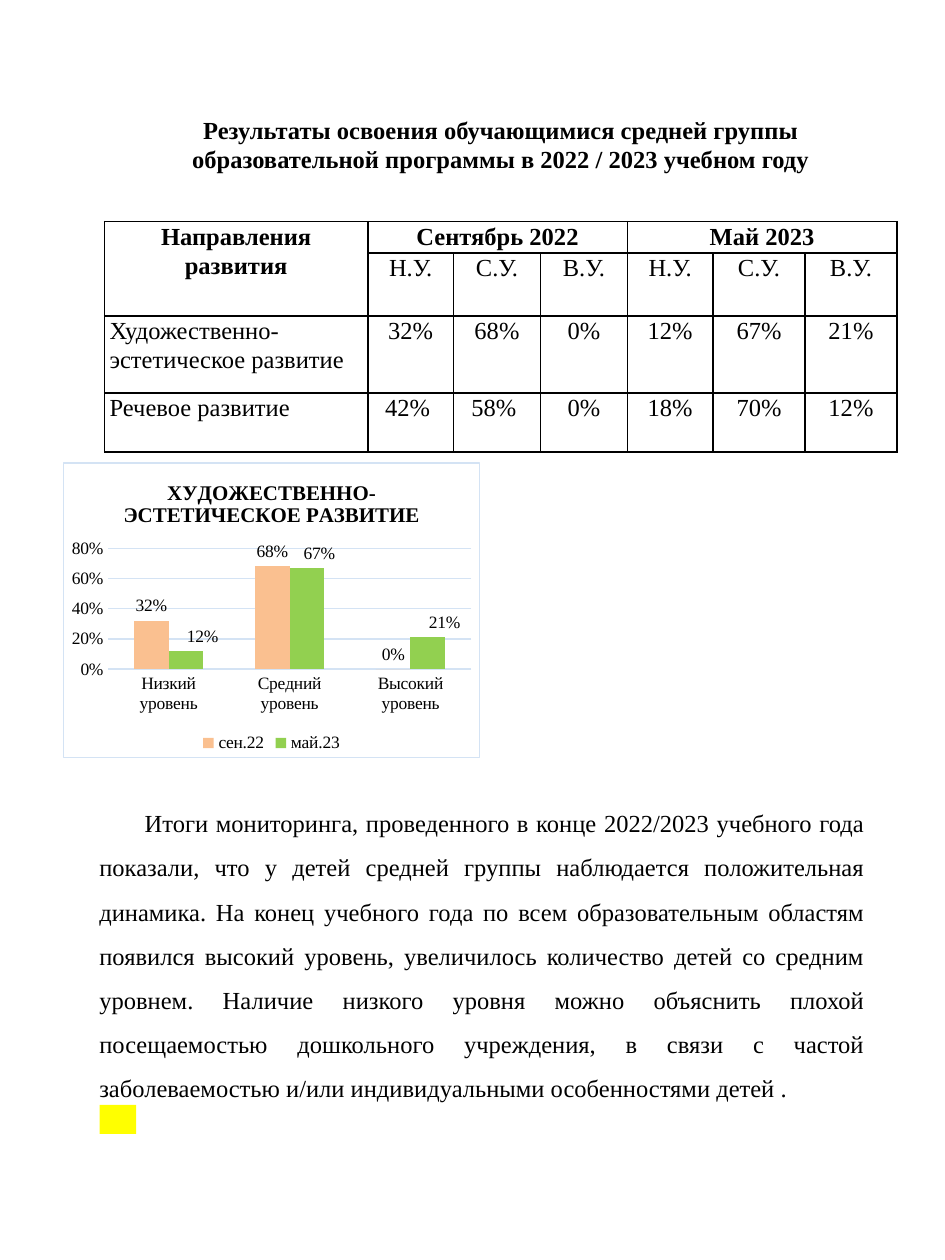
from lxml.etree import SubElement, fromstring
from pptx import Presentation
from pptx.chart.data import CategoryChartData
from pptx.dml.color import RGBColor as RGB
from pptx.enum.chart import (XL_CHART_TYPE as CT, XL_LABEL_POSITION as LP,
                             XL_LEGEND_POSITION as LEG, XL_TICK_MARK as TM)
from pptx.enum.shapes import MSO_SHAPE as SHAPE
from pptx.enum.text import MSO_ANCHOR as ANCHOR, MSO_AUTO_SIZE as FIT, PP_ALIGN as AL
from pptx.oxml import parse_xml
from pptx.oxml.ns import nsdecls, qn
from pptx.util import Inches, Pt

THEME = {
    "font": "Times New Roman", "ink": "000000", "paper": "FFFFFF", "grid": "D4E3F4",
    "mark": "FFFF00", "series": ["FAC090", "92D050"],
    "body": 14, "chart": 10, "chart_title": 12,
}

TITLE = ("Результаты освоения обучающимися средней группы "
         "образовательной программы в 2022 / 2023 учебном году")
PERIODS = ["Сентябрь 2022", "Май 2023"]
LEVELS = ["Н.У.", "С.У.", "В.У."]
ROWS = [
    ["Направления развития", PERIODS[0], "", "", PERIODS[1], "", ""],
    ["", *LEVELS, *LEVELS],
    ["Художественно- эстетическое развитие", "32%", "68%", "0%", "12%", "67%", "21%"],
    ["Речевое развитие", "42% ", "58% ", "0%", "18%", "70%", "12%"],
]
MERGES = [((0, 0), (1, 0)), ((0, 1), (0, 3)), ((0, 4), (0, 6))]
COL_W = [2.09, 0.68, 0.69, 0.69, 0.68, 0.73, 0.73]
ROW_H = [0.24, 0.31, 0.61, 0.47]

CHART_TITLE = "ХУДОЖЕСТВЕННО-ЭСТЕТИЧЕСКОЕ РАЗВИТИЕ"
CATEGORIES = ["Низкий уровень", "Средний уровень", "Высокий уровень"]
SERIES = [("сен.22", [0.32, 0.68, 0]), ("май.23", [0.12, 0.67, 0.21])]
LABEL_SHIFTS = [0.04, 0.03, 0.04]

SUMMARY = (
    "Итоги мониторинга, проведенного в конце 2022/2023 учебного года показали, "
    "что у детей средней группы наблюдается положительная динамика. "
    "На конец учебного года по всем образовательным областям появился высокий уровень, "
    "увеличилось количество детей со средним уровнем. "
    "Наличие низкого уровня можно объяснить плохой посещаемостью дошкольного учреждения, "
    "в связи с частой заболеваемостью и/или индивидуальными особенностями детей ."
)

BOXES = {
    "title": (1.02, 0.86, 5.91, 0.57),
    "table": (0.83, 1.76, sum(COL_W), sum(ROW_H)),
    "chart": (0.5, 3.67, 3.31, 2.35),
    "summary": (0.69, 6.25, 6.27, 2.81),
    "mark": (0.79, 8.77, 0.29, 0.23),
}


def box(name):
    return [Inches(v) for v in BOXES[name]]


def color(name):
    return RGB.from_string(THEME[name])


def set_all(obj, **values):
    for name, value in values.items():
        setattr(obj, name, value)


def style_font(font, size="body", bold=False):
    set_all(font, name=THEME["font"], size=Pt(THEME[size]), bold=bold)
    font.color.rgb = color("ink")


def write(tf, text, bold=False, **para):
    p = tf.paragraphs[0]
    set_all(p, **para)
    r = p.add_run()
    r.text = text
    style_font(r.font, bold=bold)
    return p


def add_title(slide):
    sp = slide.shapes.title
    set_all(sp, **dict(zip(("left", "top", "width", "height"), box("title"))))
    set_all(sp.text_frame, word_wrap=True, vertical_anchor=ANCHOR.MIDDLE,
            auto_size=FIT.SHAPE_TO_FIT_TEXT)
    write(sp.text_frame, TITLE, bold=True, alignment=AL.CENTER)


def add_borders(cell):
    tcPr = cell._tc.get_or_add_tcPr()
    for side in ("lnL", "lnR", "lnT", "lnB"):
        ln = SubElement(tcPr, qn(f"a:{side}"), w=str(Pt(1)))
        fill = SubElement(ln, qn("a:solidFill"))
        SubElement(fill, qn("a:srgbClr"), val=THEME["ink"])


def add_results(slide):
    table = slide.shapes.add_table(len(ROWS), len(COL_W), *box("table")).table
    set_all(table, first_row=False, horz_banding=False)
    for col, width in zip(table.columns, COL_W):
        col.width = Inches(width)
    for row, height in zip(table.rows, ROW_H):
        row.height = Inches(height)
    for first, last in MERGES:
        table.cell(*first).merge(table.cell(*last))
    for i, row in enumerate(ROWS):
        for j, text in enumerate(row):
            cell = table.cell(i, j)
            set_all(cell, margin_left=Inches(0.04), margin_right=Inches(0.04),
                    margin_top=0, margin_bottom=0)
            add_borders(cell)
            cell.fill.background()
            if text:
                align = AL.LEFT if j == 0 and i > 1 else AL.CENTER
                write(cell.text_frame, text, bold=i == 0, alignment=align, line_spacing=1.07)


def shift_label(point, dx):
    label = point.data_label
    style_font(label.font, "chart")
    label.position = LP.OUTSIDE_END
    layout = parse_xml(
        f'<c:layout {nsdecls("c")}><c:manualLayout><c:x val="{dx}"/>'
        '<c:y val="0"/></c:manualLayout></c:layout>')
    label._dLbl.find(qn("c:idx")).addnext(layout)


def add_chart(slide):
    data = CategoryChartData(number_format="0%")
    data.categories = CATEGORIES
    for name, values in SERIES:
        data.add_series(name, values)
    chart = slide.shapes.add_chart(CT.COLUMN_CLUSTERED, *box("chart"), data).chart
    style_font(chart.font, "chart")
    frame = parse_xml(
        f'<c:spPr {nsdecls("c", "a")}><a:solidFill><a:srgbClr val="{THEME["paper"]}"/></a:solidFill>'
        f'<a:ln w="{Pt(0.75)}"><a:solidFill><a:srgbClr val="{THEME["grid"]}"/></a:solidFill></a:ln></c:spPr>')
    chart._chartSpace.find(qn("c:chart")).addnext(frame)

    chart.has_title = True
    p = chart.chart_title.text_frame.paragraphs[0]
    r = p.add_run()
    r.text = CHART_TITLE
    style_font(r.font, "chart_title", bold=True)

    chart.has_legend = True
    set_all(chart.legend, position=LEG.BOTTOM, include_in_layout=False)
    style_font(chart.legend.font, "chart")

    cat, val = chart.category_axis, chart.value_axis
    for axis in (cat, val):
        set_all(axis, major_tick_mark=TM.NONE, minor_tick_mark=TM.NONE)
        style_font(axis.tick_labels.font, "chart")
    set_all(val, minimum_scale=0, maximum_scale=0.8, major_unit=0.2, has_major_gridlines=True)
    set_all(val.tick_labels, number_format="0%", number_format_is_linked=False)
    val.format.line.fill.background()
    for line in (cat.format.line, val.major_gridlines.format.line):
        line.color.rgb = color("grid")
        line.width = Pt(0.75)

    plot = chart.plots[0]
    set_all(plot, gap_width=150, overlap=0, vary_by_categories=False)
    for series, fill in zip(plot.series, THEME["series"]):
        series.format.fill.solid()
        series.format.fill.fore_color.rgb = RGB.from_string(fill)
        labels = series.data_labels
        set_all(labels, show_value=True, number_format="0%", number_format_is_linked=False,
                position=LP.OUTSIDE_END)
        style_font(labels.font, "chart")
    for i, dx in enumerate(LABEL_SHIFTS):
        shift_label(plot.series[1].points[i], dx)


def add_summary(slide):
    sp = slide.shapes.add_textbox(*box("summary"))
    sp.text_frame.word_wrap = True
    p = write(sp.text_frame, SUMMARY, alignment=AL.JUSTIFY, line_spacing=1.5)
    p._p.get_or_add_pPr().set("indent", str(Inches(0.36)))
    mark = slide.shapes.add_shape(SHAPE.RECTANGLE, *box("mark"))
    mark.shadow.inherit = False
    mark.fill.solid()
    mark.fill.fore_color.rgb = color("mark")
    mark.line.fill.background()


prs = Presentation()
set_all(prs, slide_width=Inches(7.5), slide_height=Inches(10))
s = prs.slides.add_slide(prs.slide_layouts[5])
add_results(s)
add_chart(s)
add_title(s)
add_summary(s)
prs.save("out.pptx")
